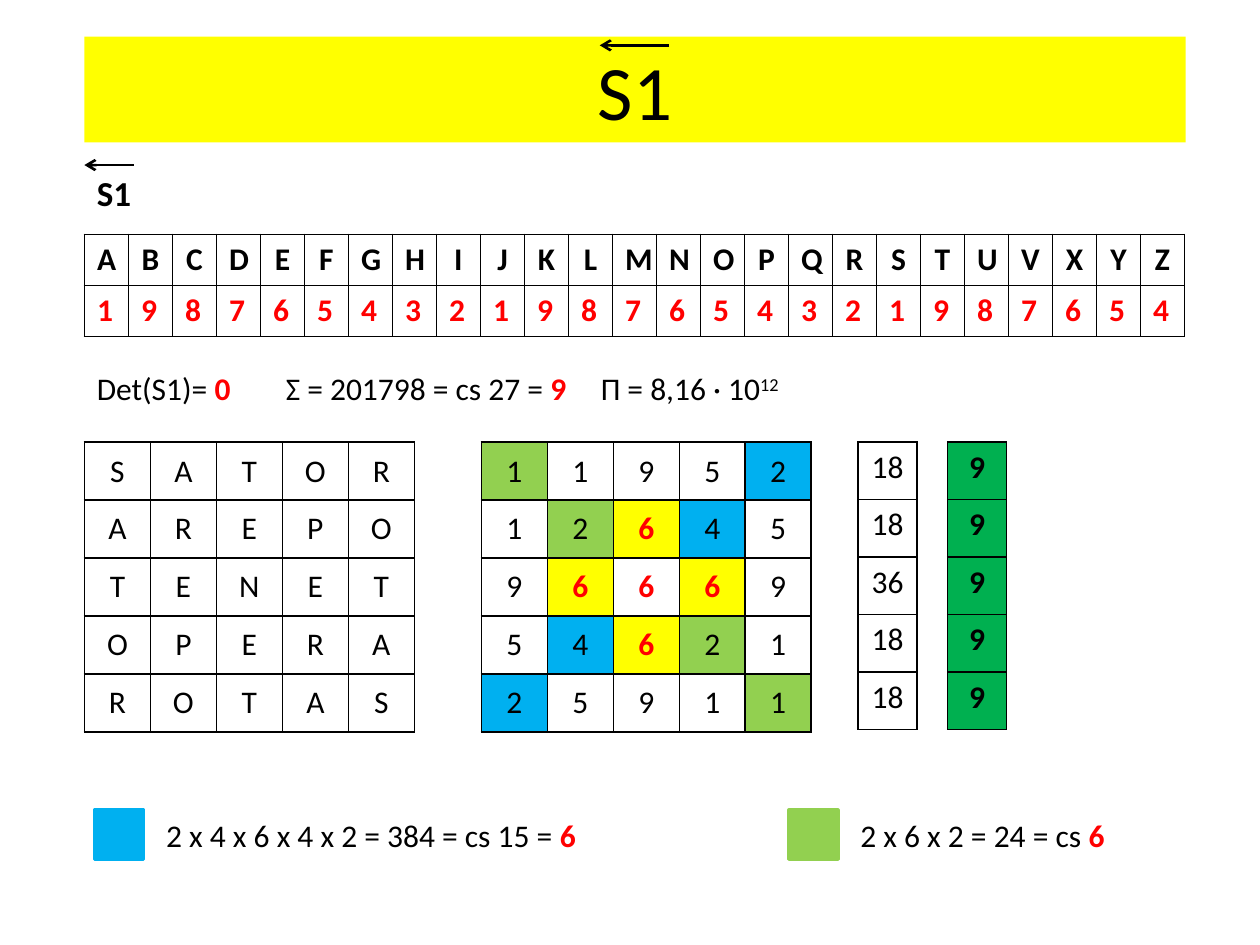
import pptx
import pptx.util
import pptx.dml.color
import pptx.enum.shapes
import pptx.enum.text
import pptx.oxml.ns
import lxml.etree

Inches = pptx.util.Inches
Pt = pptx.util.Pt
Color = pptx.dml.color.RGBColor.from_string
Align = pptx.enum.text.PP_ALIGN
Anchor = pptx.enum.text.MSO_ANCHOR
Shape = pptx.enum.shapes.MSO_SHAPE
qn = pptx.oxml.ns.qn

theme = {
    "font": "Calibri", "black": "000000", "red": "FF0000", "white": "FFFFFF",
    "yellow": "FFFF00", "blue": "00B0F0", "lime": "92D050", "green": "00B050",
    "title": 44, "head": 20, "body": 18,
}


def style(font, color="black", bold=False, size="body"):
    font.name = theme["font"]
    font.size = Pt(theme[size])
    font.bold = bold
    font.color.rgb = Color(theme[color])


def grid(left, top, wide, high, rows, look, align=Align.CENTER, anchor=Anchor.TOP):
    frame = slide.shapes.add_table(
        len(rows), len(rows[0]), Inches(left), Inches(top), Inches(wide), Inches(high))
    table = frame.table
    table.first_row = table.horz_banding = False
    for col in table.columns:
        col.width = Inches(wide / len(rows[0]))
    for r, row in enumerate(rows):
        for c, value in enumerate(row):
            fill, color, bold = look(r, c)
            cell = table.cell(r, c)
            cell.vertical_anchor = anchor
            cell.text = str(value)
            para = cell.text_frame.paragraphs[0]
            para.alignment = Align.LEFT if color == "red" and align is None else Align.CENTER
            style(para.font, color, bold)
            props = cell._tc.get_or_add_tcPr()
            for side in ("lnL", "lnR", "lnT", "lnB"):
                edge = lxml.etree.SubElement(props, qn("a:" + side), w=str(Pt(1)))
                paint = lxml.etree.SubElement(edge, qn("a:solidFill"))
                lxml.etree.SubElement(paint, qn("a:srgbClr"), val=theme["black"])
            if fill:
                cell.fill.solid()
                cell.fill.fore_color.rgb = Color(theme[fill])
            else:
                cell.fill.background()


deck = pptx.Presentation()
deck.slide_width = Inches(10)
deck.slide_height = Inches(7.5)
slide = deck.slides.add_slide(deck.slide_layouts[6])

left, full = 0.67, 8.74

for x, y, wide, high, color, edge in [
    (left, 0.29, full, 0.84, "yellow", False),
    (0.75, 6.43, 0.39, 0.39, "blue", True),
    (6.26, 6.43, 0.39, 0.39, "lime", True),
]:
    box = slide.shapes.add_shape(
        Shape.RECTANGLE, Inches(x), Inches(y), Inches(wide), Inches(high))
    box.shadow.inherit = False
    box.fill.solid()
    box.fill.fore_color.rgb = Color(theme[color])
    if edge:
        box.line.color.rgb = Color(theme[color])
        box.line.width = Pt(2)
    else:
        box.line.fill.background()
        box.text_frame.text = "S1"
        para = box.text_frame.paragraphs[0]
        para.alignment = Align.CENTER
        style(para.font, size="title")

for x, y, wide, high, size, runs in [
    (left, 1.31, 0.94, 0.44, "head", [("S1", "black", True)]),
    (left, 2.88, full, 0.4, "body", [
        ("Det(S1)= ", "black", False), ("0\t", "red", True),
        ("Σ = 201798 = cs 27 = ", "black", False), ("9\t", "red", True),
        ("Π = 8,16 · 10", "black", False), ("12", "black", False)]),
    (1.22, 6.43, 4.09, 0.4, "body", [
        ("2 x 4 x 6 x 4 x 2 = 384 = cs 15 = ", "black", False), ("6", "red", True)]),
    (6.73, 6.43, 2.83, 0.4, "body", [
        ("2 x 6 x 2 = 24 = cs ", "black", False), ("6", "red", True)]),
]:
    box = slide.shapes.add_textbox(Inches(x), Inches(y), Inches(wide), Inches(high))
    box.text_frame.word_wrap = True
    para = box.text_frame.paragraphs[0]
    for words, color, bold in runs:
        run = para.add_run()
        run.text = words
        style(run.font, color, bold, size)
        if words == "12":
            run._r.get_or_add_rPr().set("baseline", "30000")

for start, end, y in [(1.06, left, 1.31), (5.31, 4.76, 0.36)]:
    arrow = slide.shapes.add_connector(
        pptx.enum.shapes.MSO_CONNECTOR.STRAIGHT,
        Inches(start), Inches(y), Inches(end), Inches(y))
    arrow.line.color.rgb = Color(theme["black"])
    arrow.line.width = Pt(1.5)
    lxml.etree.SubElement(arrow.line._get_or_add_ln(), qn("a:tailEnd"), type="arrow")
    lxml.etree.SubElement(arrow._element.spPr, qn("a:effectLst"))

letters = "ABCDEFGHIJKLMNOPQRSTUVXYZ"
codes = {char: 9 - (i - 1) % 9 for i, char in enumerate(letters)}
words = ["SATOR", "AREPO", "TENET", "OPERA", "ROTAS"]
square = [[codes[char] for char in word] for word in words]
sums = [[sum(row)] for row in square]
roots = [[1 + (total - 1) % 9] for [total] in sums]

shades = {}
for r in range(5):
    for c in range(5):
        near = abs(r - 2) + abs(c - 2)
        if near == 0:
            shades[r, c] = "white"
        elif near == 1:
            shades[r, c] = "yellow"
        elif r == c:
            shades[r, c] = "lime"
        elif r + c == 4:
            shades[r, c] = "blue"

grid(left, 1.86, full, 0.81, [letters, list(codes.values())],
     lambda r, c: (None, "red" if r else "black", True), align=None)
grid(left, 3.51, 2.62, 2.3, words,
     lambda r, c: (None, "black", False), anchor=Anchor.MIDDLE)
grid(3.82, 3.51, 2.62, 2.3, square,
     lambda r, c: (shades.get((r, c)), "red" if square[r][c] == 6 else "black",
                   square[r][c] == 6), anchor=Anchor.MIDDLE)
grid(6.81, 3.51, 0.47, 2.28, sums, lambda r, c: (None, "black", False))
grid(7.52, 3.51, 0.47, 2.28, roots, lambda r, c: ("green", "black", True))

deck.save("out.pptx")
